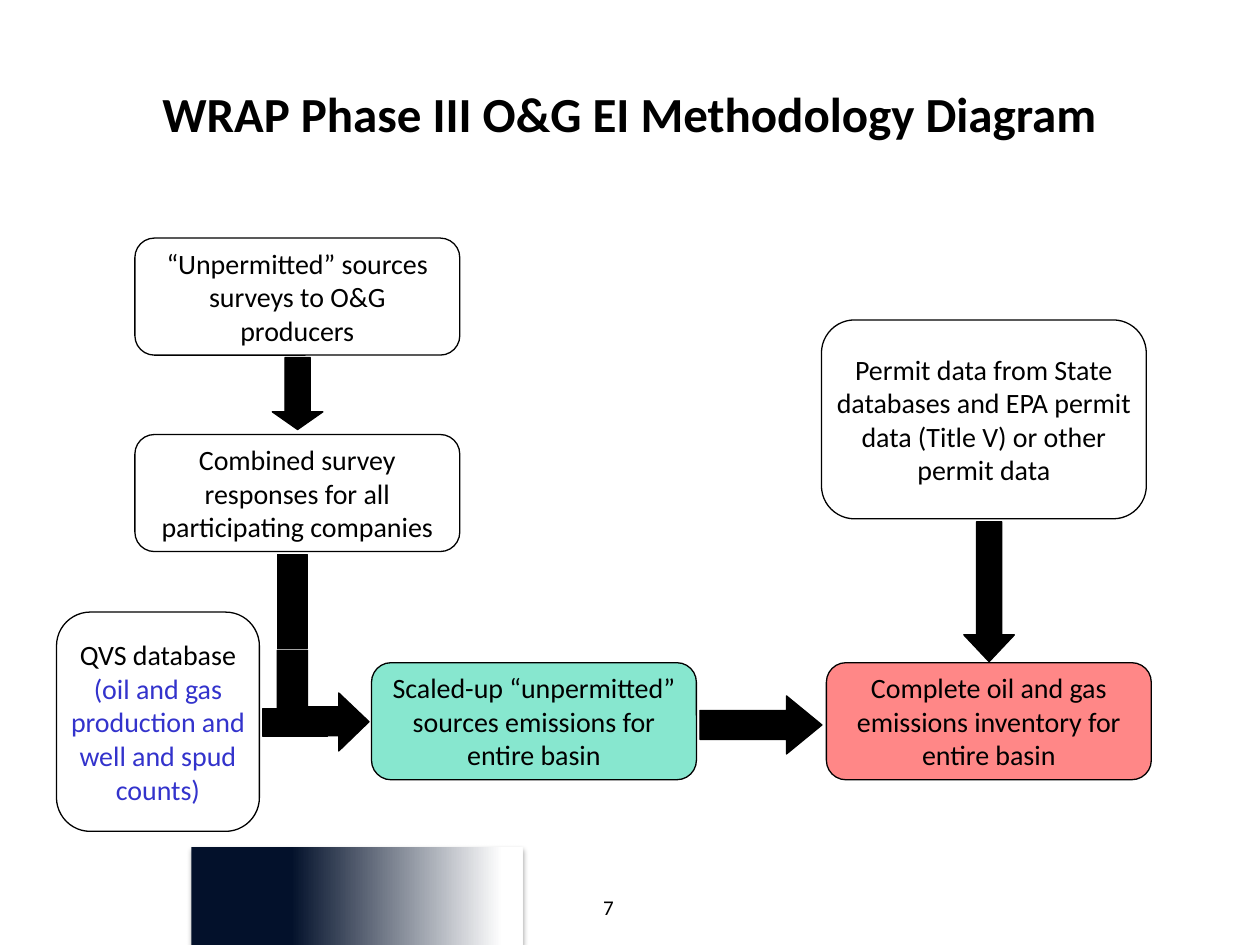
"""Build the emissions inventory methodology flow diagram."""
from lxml import etree
from pptx import Presentation
from pptx import util as u
from pptx.dml.color import RGBColor
from pptx.enum import shapes, text
from pptx.oxml import ns

COLORS = {"ink": "000000", "paper": "FFFFFF", "navy": "03112B",
          "note": "3333CC", "scaled": "00CC99", "complete": "FF0000"}
KIND = shapes.MSO_SHAPE
BOX_W, BOX_H = 6.55, 2.36
FLOW_TOP = 13.36


def rgb(name):
    return RGBColor.from_string(COLORS[name])


def cm(*lengths):
    return [u.Cm(length) for length in lengths]


def add_sub(parent, tag, **attributes):
    return etree.SubElement(parent, ns.qn(tag), attributes)


def style_run(run, size, color="ink", bold=False):
    run.font.name = "Calibri"
    run.font.size = u.Pt(size)
    run.font.bold = bold
    run.font.color.rgb = rgb(color)


def outline(part):
    part.shadow.inherit = False
    part.line.color.rgb = rgb("ink")
    part.line.width = u.Pt(0.75)


def add_step(slide, place, parts, margin=0.0, fill=None):
    """Add a rounded step whose parts are (wording, color) pairs."""
    step = slide.shapes.add_shape(KIND.ROUNDED_RECTANGLE, *cm(*place))
    outline(step)
    if fill:
        step.fill.solid()
        step.fill.fore_color.rgb = rgb(fill)
        tint = step._element.spPr.find(ns.qn("a:solidFill"))[0]
        add_sub(tint, "a:alpha", val="47000")
    else:
        step.fill.background()
    frame = step.text_frame
    frame.word_wrap = True
    frame.vertical_anchor = text.MSO_ANCHOR.MIDDLE
    frame.margin_left = frame.margin_right = u.Cm(margin)
    frame.margin_top = frame.margin_bottom = 0
    label = frame.paragraphs[0]
    label.alignment = text.PP_ALIGN.CENTER
    for wording, color in parts:
        run = label.add_run()
        run.text = wording
        style_run(run, 16, color)


def add_solid(slide, kind, place, head=None):
    """Add a black bar, or a block arrow with the given head length."""
    solid = slide.shapes.add_shape(kind, *cm(*place))
    outline(solid)
    solid.fill.solid()
    solid.fill.fore_color.rgb = rgb("ink")
    if head:
        solid.adjustments[1] = head


def add_bent_arrow(slide):
    """Add the arrow that turns from the surveys to the scaled-up step."""
    tip, *corners = [(7.44, 14.55), (6.83, 13.97), (6.83, 14.25), (6.2, 14.25),
                     (6.2, 13.11), (5.59, 13.11), (5.59, 14.83),
                     (6.83, 14.83), (6.83, 15.14)]
    builder = slide.shapes.build_freeform(*cm(*tip), scale=1.0)
    builder.add_line_segments([cm(*corner) for corner in corners], close=True)
    bent = builder.convert_to_shape()
    outline(bent)
    bent.fill.solid()
    bent.fill.fore_color.rgb = rgb("ink")


def add_caption(slide, place, wording, size, align, bold=False):
    """Add a single line of free text."""
    frame = slide.shapes.add_textbox(*cm(*place)).text_frame
    frame.word_wrap = True
    frame.text = wording
    frame.paragraphs[0].alignment = align
    style_run(frame.paragraphs[0].runs[0], size, bold=bold)


def add_footer_band(slide):
    """Add the fading navy band at the foot of the slide."""
    band = slide.shapes.add_shape(KIND.RECTANGLE, *cm(3.86, 17.07, 6.68, 1.98))
    band.line.fill.background()
    band.fill.gradient()
    band.fill.gradient_angle = 0
    for stop, position, color in zip(band.fill.gradient_stops, (0.3, 0.94),
                                     ("navy", "paper")):
        stop.position = position
        stop.color.rgb = rgb(color)
    band.shadow.inherit = False
    effects = band._element.spPr.find(ns.qn("a:effectLst"))
    shade = add_sub(effects, "a:outerShdw", blurRad=str(u.Pt(3.1)),
                    dist=str(u.Pt(1.8)), dir="5400000", rotWithShape="0")
    tone = add_sub(shade, "a:srgbClr", val=COLORS["ink"])
    add_sub(tone, "a:alpha", val="35000")


def main():
    deck = Presentation()
    deck.slide_width, deck.slide_height = cm(25.4, 19.05)
    slide = deck.slides.add_slide(deck.slide_layouts[6])
    add_footer_band(slide)

    steps = [
        ((2.72, 4.8, BOX_W, BOX_H), 0.42, None,
         "“Unpermitted” sources surveys to O&G producers"),
        ((2.72, 8.76, BOX_W, BOX_H), 0.09, None,
         "Combined survey responses for all participating companies"),
        ((7.49, FLOW_TOP, BOX_W, BOX_H), 0.09, "scaled",
         "Scaled-up “unpermitted” sources emissions for entire basin"),
        ((16.56, 6.45, BOX_W, 4.01), 0, None,
         "Permit data from State databases and EPA permit data (Title V) "
         "or other permit data"),
        ((16.66, FLOW_TOP, BOX_W, BOX_H), 0.09, "complete",
         "Complete oil and gas emissions inventory for entire basin"),
    ]
    for place, margin, fill, wording in steps:
        add_step(slide, place, [(wording, "ink")], margin, fill)
    add_step(slide, (1.14, 12.34, 4.09, 4.42),
             [("QVS database ", "ink"),
              ("(oil and gas production and well and spud counts)", "note")])

    add_solid(slide, KIND.DOWN_ARROW, (5.49, 7.21, 1.02, 1.45), 0.35)
    add_solid(slide, KIND.DOWN_ARROW, (19.43, 10.52, 1.02, 2.82), 0.53)
    add_solid(slide, KIND.RIGHT_ARROW, (14.11, 14.03, 2.46, 1.17), 0.61)
    add_bent_arrow(slide)
    add_solid(slide, KIND.RECTANGLE, (5.59, 11.18, 0.61, 1.9))
    add_solid(slide, KIND.RECTANGLE, (5.3, 14.29, 1.3, 0.56))

    add_caption(slide, (1.24, 1.55, 22.89, 1.45),
                "WRAP Phase III O&G EI Methodology Diagram", 28,
                text.PP_ALIGN.CENTER, bold=True)
    add_caption(slide, (11.91, 17.91, 1.09, 0.76), "7", 12, text.PP_ALIGN.LEFT)
    deck.save("out.pptx")


if __name__ == "__main__":
    main()
